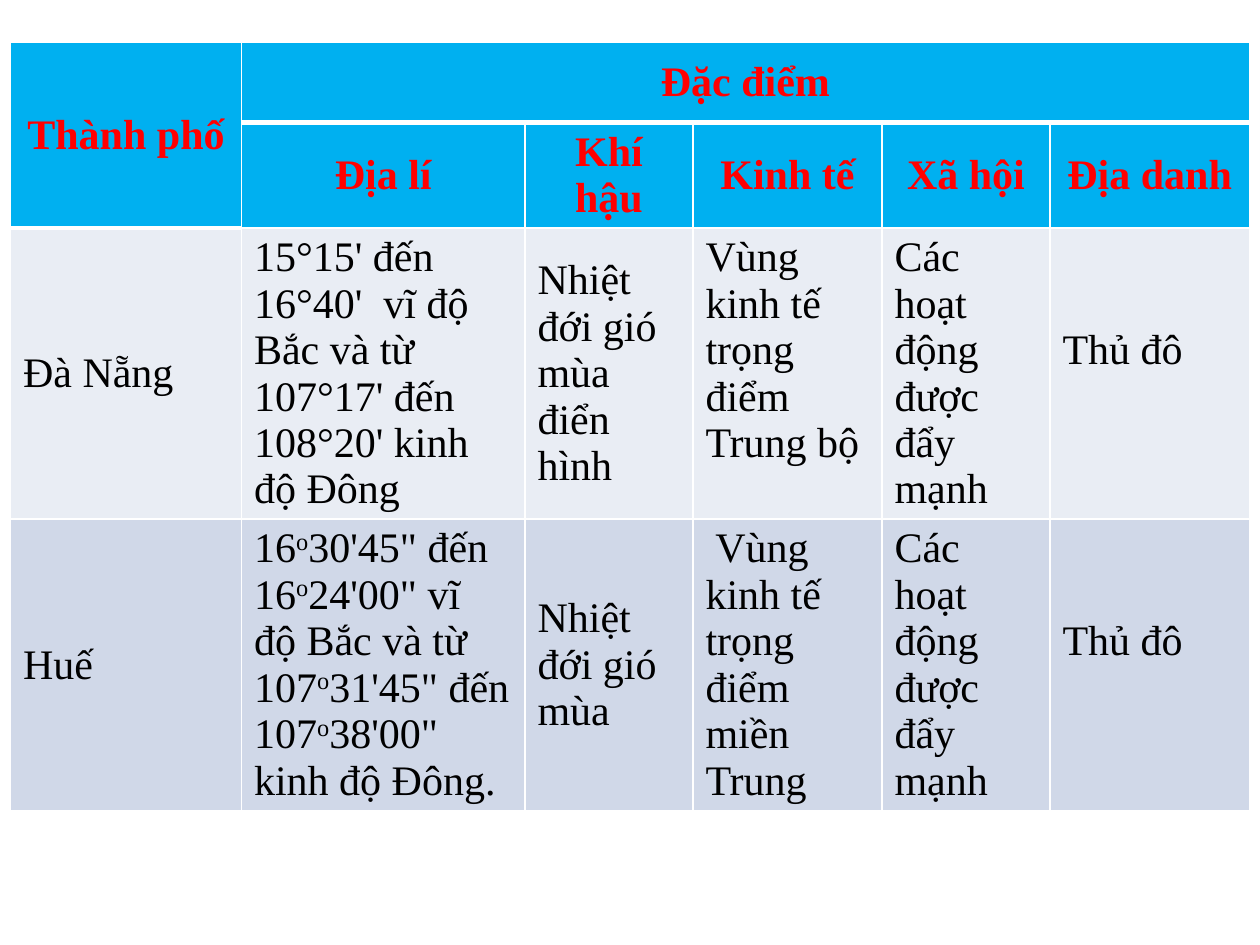
from lxml import etree
from pptx import Presentation
from pptx import util as u
from pptx.dml.color import RGBColor
from pptx.enum import text
from pptx.oxml.ns import qn

THEME = {
    "font": "Times New Roman", "size": u.Pt(24),
    "header_text": "FF0000", "body_text": "000000",
    "header_fill": "00B0F0", "body_fills": ["E9EDF4", "D0D8E8"],
    "border": "FFFFFF",
}
HEADER_ROWS = 2
COLUMN_WIDTHS = [132, 162, 96, 108, 96, 114]
ROW_HEIGHT = 46
ROWS = [
    ["Thành phố", "Đặc điểm", "", "", "", ""],
    ["", "Địa lí", "Khí hậu", "Kinh tế", "Xã hội", "Địa danh"],
    ["Đà Nẵng", "15°15' đến 16°40'  vĩ độ Bắc và từ 107°17' đến 108°20' kinh độ Đông",
     "Nhiệt đới gió mùa điển hình", "Vùng kinh tế trọng điểm Trung bộ",
     "Các hoạt động được đẩy mạnh", "Thủ đô"],
    # A caret marks the letter after it as superscript
    ["Huế", "16^o30'45\" đến 16^o24'00\" vĩ độ Bắc và từ 107^o31'45\" đến 107^o38'00\" kinh độ Ðông. ",
     "Nhiệt đới gió mùa", " Vùng kinh tế trọng điểm miền Trung",
     "Các hoạt động được đẩy mạnh", "Thủ đô"],
]
# Cells whose text sits half a line above the middle
RAISED_CELLS = {(2, 3), (2, 5), (3, 5)}


def add_span(para, words, color, bold, raised=False):
    span = para.add_run()
    span.text = words
    font_format = {"name": THEME["font"], "size": THEME["size"], "bold": bold}
    for name, value in font_format.items():
        setattr(span.font, name, value)
    span.font.color.rgb = RGBColor.from_string(color)
    if raised:
        span._r.get_or_add_rPr().set("baseline", "30000")


def set_borders(cell, widths):
    properties = cell._tc.get_or_add_tcPr()
    for position, (side, width) in enumerate(widths.items()):
        line = etree.Element(qn(f"a:ln{side}"), w=str(u.Pt(width)))
        fill = etree.SubElement(line, qn("a:solidFill"))
        etree.SubElement(fill, qn("a:srgbClr"), val=THEME["border"])
        properties.insert(position, line)


# Page
deck = Presentation()
deck.slide_width, deck.slide_height = u.Pt(720), u.Pt(540)
page = deck.slides.add_slide(deck.slide_layouts[6])

# Table grid
frame = page.shapes.add_table(
    len(ROWS), len(COLUMN_WIDTHS), u.Pt(6), u.Pt(24),
    u.Pt(sum(COLUMN_WIDTHS)), u.Pt(ROW_HEIGHT * len(ROWS)))
table = frame.table
for column, width in zip(table.columns, COLUMN_WIDTHS):
    column.width = u.Pt(width)
for row in table.rows:
    row.height = u.Pt(ROW_HEIGHT)

# Cells
for r, row in enumerate(ROWS):
    header = r < HEADER_ROWS
    fill = THEME["header_fill"] if header else THEME["body_fills"][r - HEADER_ROWS]
    color = THEME["header_text"] if header else THEME["body_text"]
    for c, words in enumerate(row):
        cell = table.cell(r, c)
        cell.vertical_anchor = text.MSO_ANCHOR.MIDDLE
        cell.fill.solid()
        cell.fill.fore_color.rgb = RGBColor.from_string(fill)
        thick = r == 0 or (r == 1 and c == 0)
        set_borders(cell, {"L": 1, "R": 1, "T": 1, "B": 3 if thick else 1})
        if (r, c) in RAISED_CELLS:
            cell.margin_bottom = u.Pt(30)
        para = cell.text_frame.paragraphs[0]
        para.alignment = text.PP_ALIGN.CENTER if header else text.PP_ALIGN.LEFT
        first, *rest = words.split("^")
        if first:
            add_span(para, first, color, header)
        for part in rest:
            add_span(para, part[0], color, header, raised=True)
            add_span(para, part[1:], color, header)

# Merged headings
table.cell(0, 0).merge(table.cell(1, 0))
table.cell(0, 1).merge(table.cell(0, 5))

deck.save("out.pptx")
